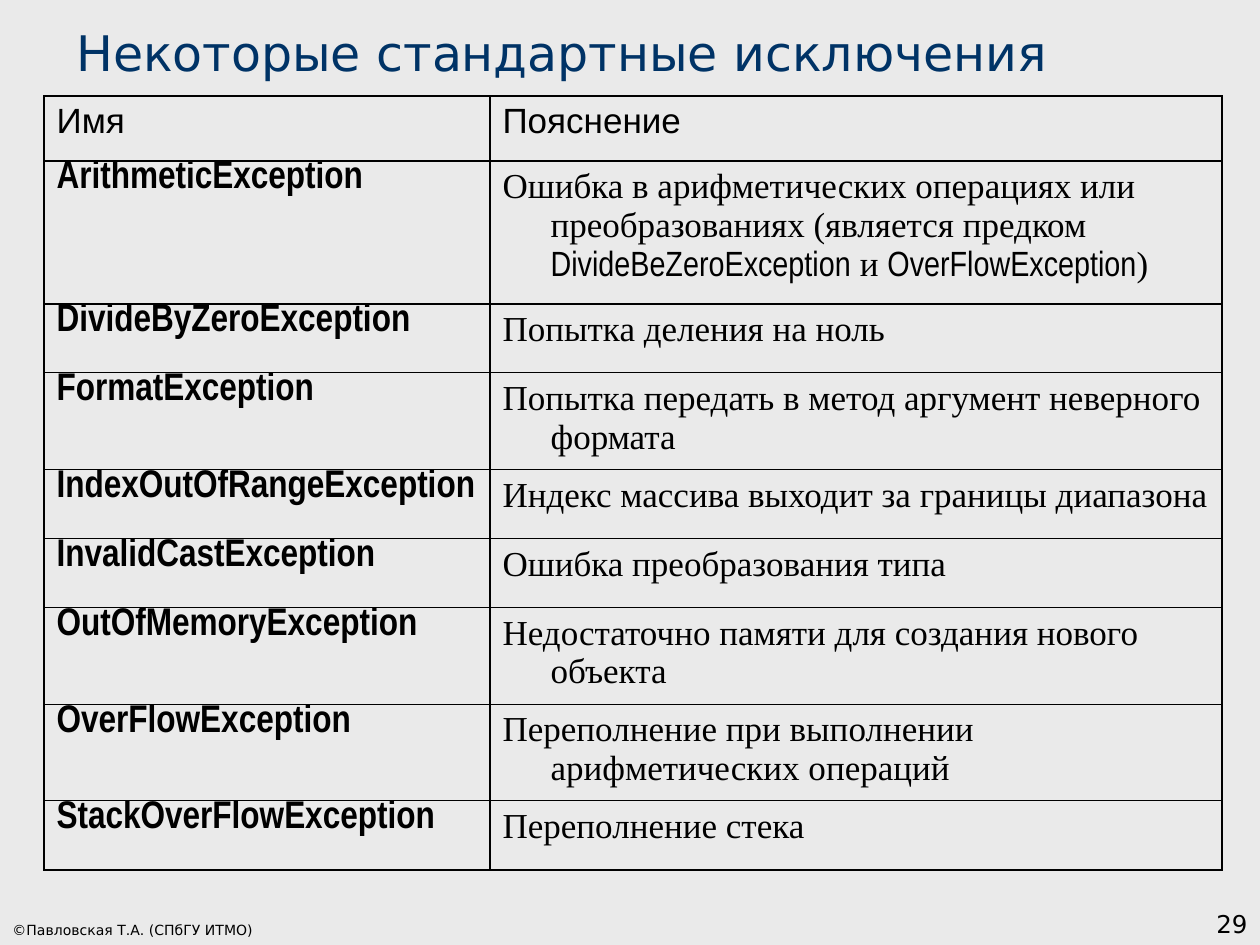
from dataclasses import dataclass

from lxml.etree import SubElement
from pptx import Presentation
from pptx.dml.color import RGBColor
from pptx.enum.text import MSO_ANCHOR, PP_ALIGN
from pptx.oxml.ns import qn
from pptx.util import Emu, Pt

EMU_PER_PX = 914400 / 126


def px(length: int) -> Emu:
    return Emu(round(length * EMU_PER_PX))


@dataclass(frozen=True)
class TextStyle:
    font: str
    size: int
    color: str = "000000"
    bold: bool = False


@dataclass(frozen=True)
class Theme:
    background: str = "EAEAEA"
    border: str = "000000"
    thick: float = 1
    thin: float = 0.75
    title: TextStyle = TextStyle("DejaVu Sans", 28, "003366")
    footer: TextStyle = TextStyle("DejaVu Sans", 8)
    number: TextStyle = TextStyle("DejaVu Sans", 14)
    header: TextStyle = TextStyle("Arial", 20)
    name: TextStyle = TextStyle("Arial Narrow", 22, bold=True)
    description: TextStyle = TextStyle("Times New Roman", 20)
    code: TextStyle = TextStyle("Arial Narrow", 20)


THEME = Theme()


@dataclass(frozen=True)
class Label:
    text: str
    left: int
    top: int
    width: int
    height: int
    style: TextStyle
    align: PP_ALIGN = PP_ALIGN.LEFT


@dataclass(frozen=True)
class ExceptionRow:
    name: str
    description: tuple[str, ...]  # prose and code pieces alternate
    height: int


LABELS = (
    Label("©Павловская Т.А. (СПбГУ ИТМО)", 0, 910, 392, 35, THEME.footer),
    Label("29", 998, 882, 262, 63, THEME.number, PP_ALIGN.RIGHT),
    Label("Некоторые стандартные исключения", 64, 16, 1181, 72, THEME.title),
)

TABLE_LEFT, TABLE_TOP = 44, 96
COLUMN_WIDTHS = (446, 732)
HEADERS = ("Имя", "Пояснение")
HEADER_HEIGHT = 65
HANGING_INDENT = 48
ONE_LINE, TWO_LINES, THREE_LINES = 69, 95, 143

ROWS = (
    ExceptionRow("ArithmeticException", (
        "Ошибка в арифметических операциях или преобразованиях (является предком ",
        "DivideBeZeroException", " и ", "OverFlowException", ")"), THREE_LINES),
    ExceptionRow("DivideByZeroException", ("Попытка деления на ноль",), ONE_LINE),
    ExceptionRow("FormatException",
                 ("Попытка передать в метод аргумент неверного формата",), TWO_LINES),
    ExceptionRow("IndexOutOfRangeException",
                 ("Индекс массива выходит за границы диапазона",), ONE_LINE),
    ExceptionRow("InvalidCastException", ("Ошибка преобразования типа",), ONE_LINE),
    ExceptionRow("OutOfMemoryException",
                 ("Недостаточно памяти для создания нового объекта",), TWO_LINES),
    ExceptionRow("OverFlowException",
                 ("Переполнение при выполнении арифметических операций",), TWO_LINES),
    ExceptionRow("StackOverFlowException", ("Переполнение стека",), ONE_LINE),
)


def apply_style(run, style: TextStyle) -> None:
    run.font.name = style.font
    run.font.size = Pt(style.size)
    run.font.bold = style.bold
    run.font.color.rgb = RGBColor.from_string(style.color)


def add_label(slide, label: Label) -> None:
    shape = slide.shapes.add_textbox(
        px(label.left), px(label.top), px(label.width), px(label.height))
    text_frame = shape.text_frame
    text_frame.word_wrap = True
    text_frame.vertical_anchor = MSO_ANCHOR.BOTTOM
    text_frame.text = label.text
    paragraph = text_frame.paragraphs[0]
    paragraph.alignment = label.align
    apply_style(paragraph.runs[0], label.style)


def add_border(cell, side: str, width: float) -> None:
    line = SubElement(cell._tc.get_or_add_tcPr(), qn(f"a:ln{side}"), w=str(Pt(width)))
    fill = SubElement(line, qn("a:solidFill"))
    SubElement(fill, qn("a:srgbClr"), val=THEME.border)


def fill_cell(cell, pieces: tuple[str, ...], styles: tuple[TextStyle, ...],
              top_width: float, bottom_width: float) -> None:
    paragraph = cell.text_frame.paragraphs[0]
    properties = paragraph._p.get_or_add_pPr()
    properties.set("marL", str(px(HANGING_INDENT)))
    properties.set("indent", str(px(-HANGING_INDENT)))
    for index, piece in enumerate(pieces):
        run = paragraph.add_run()
        run.text = piece
        apply_style(run, styles[index % len(styles)])
    for side, width in (("L", THEME.thick), ("R", THEME.thick),
                        ("T", top_width), ("B", bottom_width)):
        add_border(cell, side, width)
    cell.fill.background()


def add_exception_table(slide) -> None:
    heights = (HEADER_HEIGHT, *(row.height for row in ROWS))
    table = slide.shapes.add_table(
        len(heights), len(COLUMN_WIDTHS), px(TABLE_LEFT), px(TABLE_TOP),
        px(sum(COLUMN_WIDTHS)), px(sum(heights))).table
    table.first_row = False
    table.horz_banding = False
    for column, width in zip(table.columns, COLUMN_WIDTHS):
        column.width = px(width)
    for table_row, height in zip(table.rows, heights):
        table_row.height = px(height)

    # Header row
    for index, header in enumerate(HEADERS):
        fill_cell(table.cell(0, index), (header,), (THEME.header,),
                  THEME.thick, THEME.thick)

    # Exception rows
    for index, row in enumerate(ROWS, start=1):
        top_width = THEME.thick if index == 1 else THEME.thin
        bottom_width = THEME.thick if index == len(ROWS) else THEME.thin
        name_cell = table.cell(index, 0)
        name_cell.margin_top = name_cell.margin_bottom = 0
        fill_cell(name_cell, (row.name,), (THEME.name,), top_width, bottom_width)
        fill_cell(table.cell(index, 1), row.description,
                  (THEME.description, THEME.code), top_width, bottom_width)


def main() -> None:
    presentation = Presentation()
    presentation.slide_width, presentation.slide_height = px(1260), px(945)
    slide = presentation.slides.add_slide(presentation.slide_layouts[6])
    slide.background.fill.solid()
    slide.background.fill.fore_color.rgb = RGBColor.from_string(THEME.background)

    # Title, footer and page number
    for label in LABELS:
        add_label(slide, label)

    add_exception_table(slide)
    presentation.save("out.pptx")


if __name__ == "__main__":
    main()
